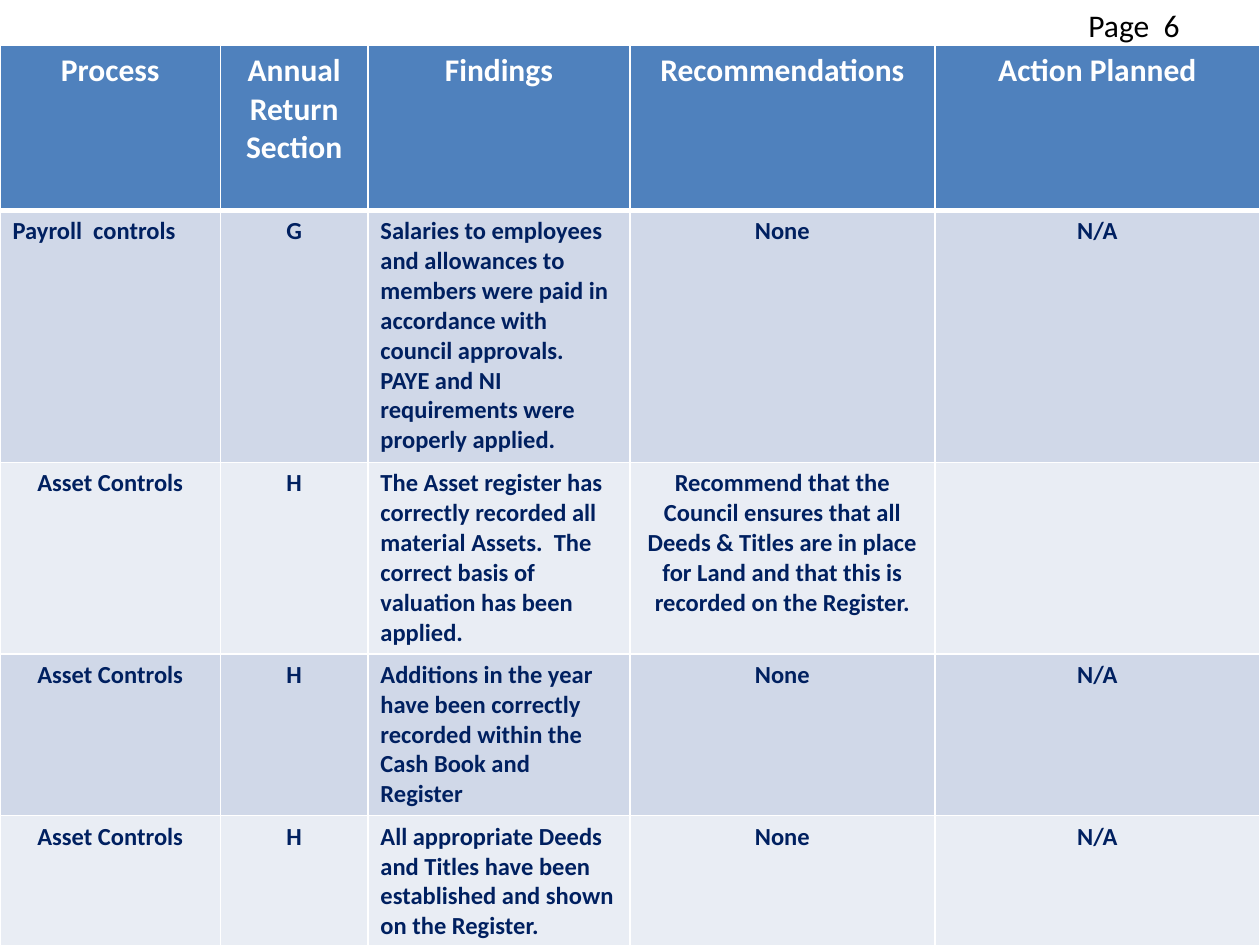
from lxml.etree import SubElement
from pptx import Presentation
from pptx.dml.color import RGBColor as RGB
from pptx.enum.text import MSO_AUTO_SIZE as AUTO, PP_ALIGN as ALIGN
from pptx.oxml.ns import qn
from pptx.util import Inches, Pt

COLORS = {"header": "4F81BD", "band_dark": "D0D8E8", "band_light": "E9EDF4",
          "border": "FFFFFF", "header_text": "FFFFFF", "body_text": "002060",
          "page_text": "000000"}
HEADER_FONT = {"name": "Calibri", "size": Pt(18), "bold": True}
BODY_FONT = {"name": "Calibri", "size": Pt(14), "bold": True}
PAGE_FONT = {"name": "Calibri", "size": Pt(18)}

COL_WIDTHS = [1.75, 1.17, 2.08, 2.42, 2.58]
ROW_HEIGHTS = [1.31, 2, 1.52, 1.28, 1.06]
FINDINGS_COL = 2
ROWS = [
    ["Process", "Annual Return Section", "Findings", "Recommendations",
     "Action Planned"],
    ["Payroll  controls", "G",
     "Salaries to employees and allowances to members were paid in accordance "
     "with council approvals. PAYE and NI requirements were properly applied.",
     "None", "N/A"],
    ["Asset Controls", "H",
     "The Asset register has correctly recorded all material Assets.  "
     "The correct basis of valuation has been applied.",
     "Recommend that the Council ensures that all Deeds & Titles are in place "
     "for Land and that this is recorded on the Register.", ""],
    ["Asset Controls", "H",
     "Additions in the year have been correctly recorded within the Cash Book "
     "and Register", "None", "N/A"],
    ["Asset Controls", "H",
     "All appropriate Deeds and Titles have been established and shown on the "
     "Register.", "None", "N/A"],
]


def write(p, text, font, color, align=ALIGN.LEFT):
    p.alignment = align
    if not text:
        return
    r = p.add_run()
    r.text = text
    for name, value in font.items():
        setattr(r.font, name, value)
    r.font.color.rgb = RGB.from_string(COLORS[color])


def set_borders(cell, top=1, bottom=1):
    tc_pr = cell._tc.get_or_add_tcPr()
    for side, width in {"L": 1, "R": 1, "T": top, "B": bottom}.items():
        ln = SubElement(tc_pr, qn(f"a:ln{side}"), w=str(Pt(width)))
        fill = SubElement(ln, qn("a:solidFill"))
        SubElement(fill, qn("a:srgbClr"), val=COLORS["border"])


def style_cell(cell, row, fill):
    set_borders(cell, top=3 if row == 1 else 1, bottom=3 if row == 0 else 1)
    cell.fill.solid()
    cell.fill.fore_color.rgb = RGB.from_string(COLORS[fill])


def add_findings_table(slide):
    table = slide.shapes.add_table(
        len(ROWS), len(COL_WIDTHS), Inches(0), Inches(0.36),
        Inches(sum(COL_WIDTHS)), Inches(sum(ROW_HEIGHTS))).table
    for column, width in zip(table.columns, COL_WIDTHS):
        column.width = Inches(width)
    for i, (texts, height) in enumerate(zip(ROWS, ROW_HEIGHTS)):
        table.rows[i].height = Inches(height)
        if i == 0:
            fill, font, color = "header", HEADER_FONT, "header_text"
        else:
            fill = "band_dark" if i % 2 else "band_light"
            font, color = BODY_FONT, "body_text"
        for j, text in enumerate(texts):
            cell = table.cell(i, j)
            style_cell(cell, i, fill)
            left = i > 0 and j == FINDINGS_COL or (i, j) == (1, 0)
            write(cell.text_frame.paragraphs[0], text, font, color,
                  ALIGN.LEFT if left else ALIGN.CENTER)


def add_page_label(slide, text):
    sp = slide.shapes.add_textbox(Inches(8.54), Inches(0), Inches(1.46),
                                  Inches(0.4))
    tf = sp.text_frame
    tf.word_wrap = True
    tf.auto_size = AUTO.SHAPE_TO_FIT_TEXT
    write(tf.paragraphs[0], text, PAGE_FONT, "page_text")


def main():
    prs = Presentation()
    prs.slide_width, prs.slide_height = Inches(10), Inches(7.5)
    slide = prs.slides.add_slide(prs.slide_layouts[6])
    add_findings_table(slide)
    add_page_label(slide, "Page  6")
    prs.save("out.pptx")


if __name__ == "__main__":
    main()
